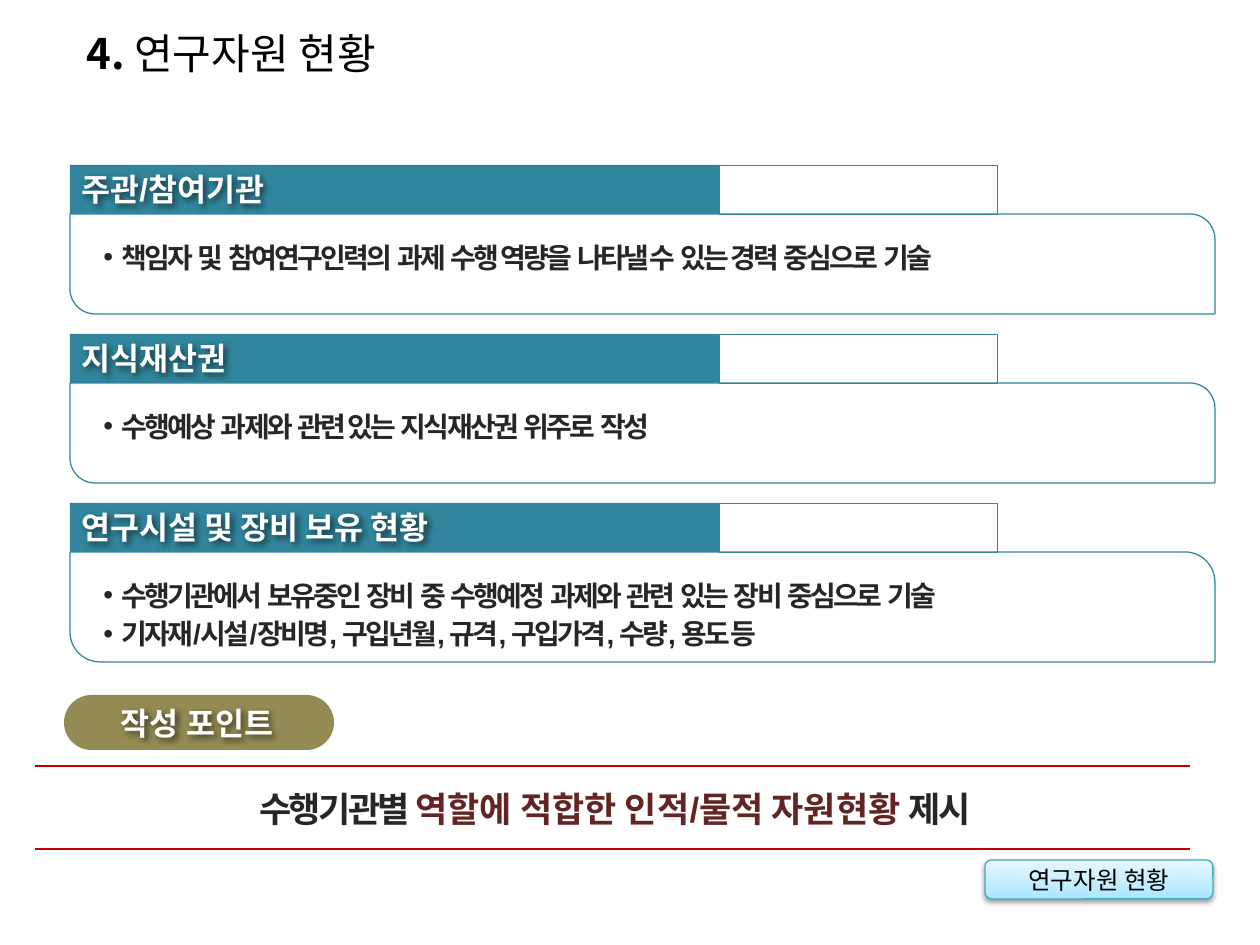
from dataclasses import dataclass

from lxml import etree
from pptx import Presentation
from pptx.dml.color import RGBColor
from pptx.enum import shapes, text
from pptx.oxml.ns import qn
from pptx.util import Pt

PX = 914400 // 126


@dataclass(frozen=True)
class Theme:
    teal: str = "31859C"
    olive: str = "948A54"
    red: str = "C00000"
    maroon: str = "632523"
    ink: str = "262626"
    black: str = "000000"
    white: str = "FFFFFF"
    sky_edge: str = "46AAC5"
    sky: tuple = ((0, "A7E6FF"), (35, "C1EDFF"), (100, "E7F8FF"))
    latin: str = "Arial"
    korean: str = "Noto Sans CJK KR"
    title: int = 24
    message: int = 20
    heading: int = 18
    body: int = 16
    button: int = 14


THEME = Theme()
HEADING = {"size": THEME.heading, "color": THEME.white, "bold": True}
BODY = {"size": THEME.body, "color": THEME.ink, "bold": True, "spacing": -1.5}
MESSAGE = {**BODY, "size": THEME.message}
TITLE = {"size": THEME.title, "color": THEME.black, "name": THEME.korean}
BUTTON = {**TITLE, "size": THEME.button}

SECTIONS = [
    ("주관/참여기관", 100, 25,
     ["책임자  및  참여연구인력의  과제  수행 역량을  나타낼 수  있는 경력  중심으로  기술"]),
    ("지식재산권", 100, 25,
     ["수행예상  과제와  관련 있는  지식재산권  위주로  작성"]),
    ("연구시설 및 장비 보유 현황", 110, 30,
     ["수행기관에서  보유중인  장비  중  수행예정  과제와  관련  있는  장비  중심으로  기술",
      "기자재/시설/장비명, 구입년월, 규격, 구입가격, 수량, 용도 등"]),
]


def px(*lengths):
    return [length * PX for length in lengths]


def child(parent, tag, **attributes):
    return etree.SubElement(parent, qn(tag), {k: str(v) for k, v in attributes.items()})


def add_shadow(shape, blur, distance, angle, opacity):
    effects = shape._element.spPr.find(qn("a:effectLst"))
    shadow = child(effects, "a:outerShdw", blurRad=Pt(blur), dist=Pt(distance),
                   dir=angle * 60000, algn="ctr", rotWithShape=0)
    color = child(shadow, "a:srgbClr", val=THEME.black)
    child(color, "a:alpha", val=opacity * 1000)


def add_block(slide, kind, box, fill=None, line=None, width=0.25, rounding=()):
    block = slide.shapes.add_shape(kind, *px(*box))
    block.shadow.inherit = False
    for index, value in enumerate(rounding):
        block.adjustments[index] = value
    if fill:
        block.fill.solid()
        block.fill.fore_color.rgb = RGBColor.from_string(fill)
    else:
        block.fill.background()
    if line:
        block.line.color.rgb = RGBColor.from_string(line)
        block.line.width = Pt(width)
    else:
        block.line.fill.background()
    return block


def fill_gradient(shape, stops, angle):
    shape.fill.gradient()
    gradient = shape._element.spPr.find(qn("a:gradFill"))
    for part in list(gradient):
        gradient.remove(part)
    stop_list = child(gradient, "a:gsLst")
    for position, color in stops:
        child(child(stop_list, "a:gs", pos=position * 1000), "a:srgbClr", val=color)
    child(gradient, "a:lin", ang=angle * 60000, scaled=0)


def add_run(paragraph, words, style):
    run = paragraph.add_run()
    run.text = words
    values = {"name": THEME.latin, "bold": False, **style}
    values["size"] = Pt(values["size"])
    color = values.pop("color")
    spacing = values.pop("spacing", 0)
    for key, value in values.items():
        setattr(run.font, key, value)
    run.font.color.rgb = RGBColor.from_string(color)
    if spacing:
        run.font._element.set("spc", str(int(spacing * 100)))
    if values["name"] == THEME.korean:
        child(run.font._element, "a:ea", typeface=THEME.korean)


def write(shape, paragraphs, align=text.PP_ALIGN.LEFT, bullet=False, after=0, **frame_format):
    frame = shape.text_frame
    for key, value in {"word_wrap": True, **frame_format}.items():
        setattr(frame, key, value)
    for index, runs in enumerate(paragraphs):
        paragraph = frame.add_paragraph() if index else frame.paragraphs[0]
        paragraph.alignment = align
        paragraph.space_after = Pt(after)
        if bullet:
            properties = paragraph._p.get_or_add_pPr()
            properties.set("marL", str(18 * PX))
            properties.set("indent", str(-18 * PX))
            child(properties, "a:buFont", typeface=THEME.latin)
            child(properties, "a:buChar", char="•")
        for words, style in runs:
            add_run(paragraph, words, style)


def add_text(slide, box, paragraphs, **format_values):
    label = slide.shapes.add_textbox(*px(*box))
    write(label, paragraphs, **format_values)
    return label


def add_heading(slide, box, words, **format_values):
    heading = add_text(slide, box, [[(words, HEADING)]],
                       vertical_anchor=text.MSO_ANCHOR.MIDDLE, **format_values)
    heading.shadow.inherit = False
    add_shadow(heading, 4, 2, 45, 60)


def add_section(slide, top, heading, height, radius, points):
    tab_height = 49
    body_top = top + tab_height
    rectangle = shapes.MSO_SHAPE.RECTANGLE
    add_block(slide, rectangle, (70, top, 649, tab_height), fill=THEME.teal)
    add_block(slide, rectangle, (719, top, 278, tab_height), line=THEME.teal)
    body = add_block(slide, shapes.MSO_SHAPE.ROUND_2_DIAG_RECTANGLE,
                     (70, body_top, 1145, height), line=THEME.teal, width=0.7,
                     rounding=(radius / height, 0))
    body._element.spPr.find(qn("a:xfrm")).set("flipH", "1")
    add_heading(slide, (69, top, 660, 47), heading)
    add_text(slide, (91, body_top + 20, 1095, 8 + 39 * len(points)),
             [[(point, BODY)] for point in points], bullet=True, after=3,
             auto_size=text.MSO_AUTO_SIZE.SHAPE_TO_FIT_TEXT)


def add_rule(slide, y):
    rule = slide.shapes.add_connector(shapes.MSO_CONNECTOR.STRAIGHT, *px(1190, y, 35, y))
    rule.line.color.rgb = RGBColor.from_string(THEME.red)
    rule.line.width = Pt(1.5)
    child(rule._element.spPr, "a:effectLst")


def add_button(slide, box, words):
    button = add_block(slide, shapes.MSO_SHAPE.ROUNDED_RECTANGLE, box,
                       line=THEME.sky_edge, width=0.75)
    fill_gradient(button, THEME.sky, 270)
    add_shadow(button, 3.1, 1.6, 90, 38)
    write(button, [[(words, BUTTON)]], align=text.PP_ALIGN.CENTER,
          vertical_anchor=text.MSO_ANCHOR.MIDDLE)


def main():
    deck = Presentation()
    deck.slide_width, deck.slide_height = px(1260, 945)
    slide = deck.slides.add_slide(deck.slide_layouts[6])

    add_text(slide, (74, 21, 345, 63),
             [[("4. ", {**TITLE, "bold": True}), ("연구자원 현황", TITLE)]],
             word_wrap=False, auto_size=text.MSO_AUTO_SIZE.SHAPE_TO_FIT_TEXT)
    for index, section in enumerate(SECTIONS):
        add_section(slide, 165 + 169 * index, *section)

    add_block(slide, shapes.MSO_SHAPE.ROUNDED_RECTANGLE, (64, 695, 270, 55),
              fill=THEME.olive, rounding=(0.5,))
    add_heading(slide, (83, 701, 228, 43), "작성 포인트", align=text.PP_ALIGN.CENTER)
    for y in (766, 849):
        add_rule(slide, y)
    emphasis = {**MESSAGE, "color": THEME.maroon, "spacing": 0}
    add_text(slide, (35, 781, 1160, 55),
             [[("수행기관별 ", MESSAGE),
               ("역할에 적합한 인적/물적 자원현황 ", emphasis),
               ("제시", MESSAGE)]],
             align=text.PP_ALIGN.CENTER, after=6,
             auto_size=text.MSO_AUTO_SIZE.SHAPE_TO_FIT_TEXT)
    add_button(slide, (985, 860, 228, 39), "연구자원 현황")

    deck.save("out.pptx")


if __name__ == "__main__":
    main()
